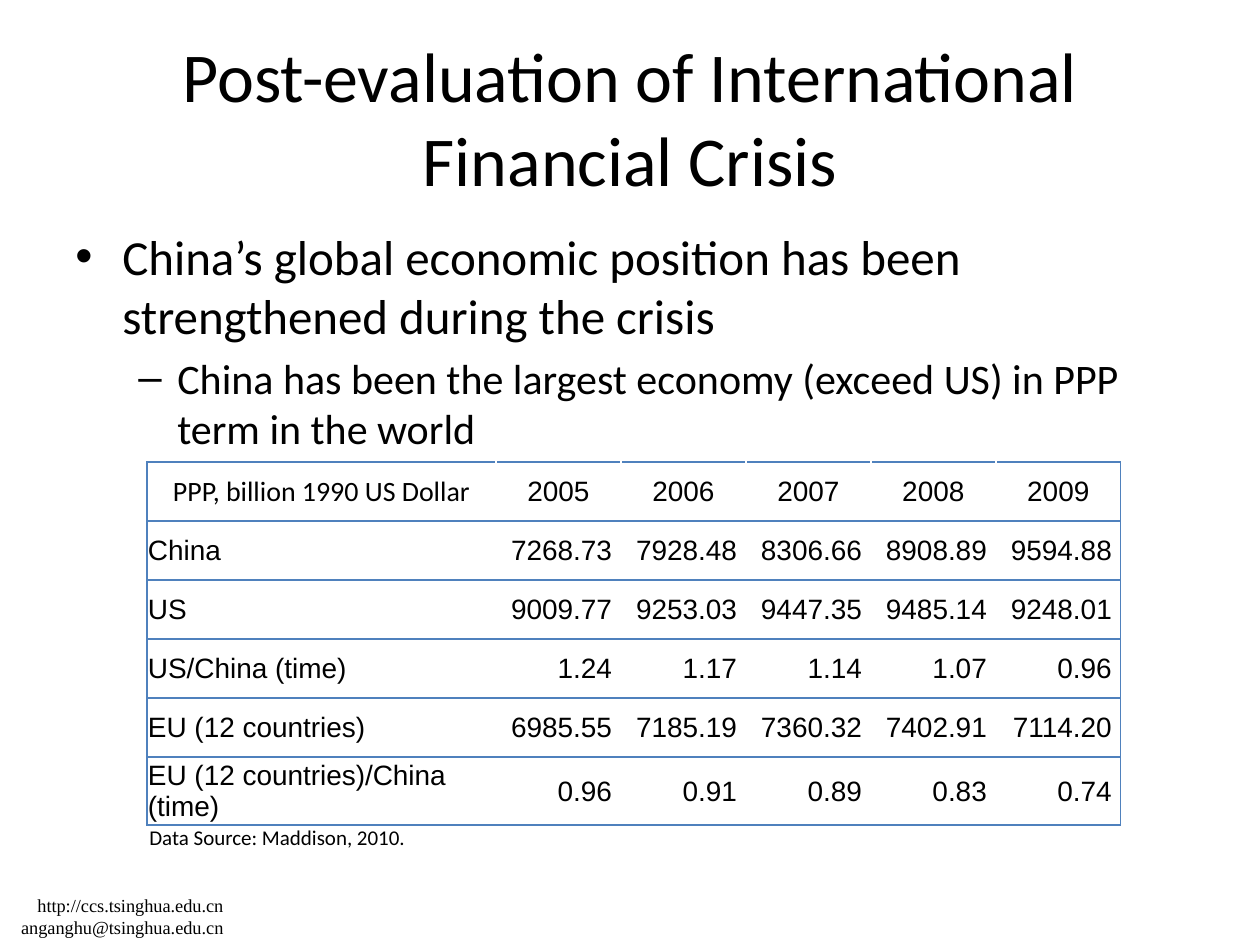
from lxml.etree import SubElement
from pptx import Presentation
from pptx.dml.color import RGBColor
from pptx.enum.text import MSO_ANCHOR, PP_ALIGN
from pptx.oxml.ns import qn
from pptx.util import Pt

PX = 914400 / 126
COLORS = {"text": "000000", "cell": "FFFFFF", "border": "4F81BD"}
YEARS = ["2005", "2006", "2007", "2008", "2009"]
ECONOMIES = [
    ("China", ["7268.73", "7928.48", "8306.66", "8908.89", "9594.88"]),
    ("US", ["9009.77", "9253.03", "9447.35", "9485.14", "9248.01"]),
    ("US/China (time)", ["1.24", "1.17", "1.14", "1.07", "0.96"]),
    ("EU (12 countries)", ["6985.55", "7185.19", "7360.32", "7402.91", "7114.20"]),
    ("EU (12 countries)/China (time)", ["0.96", "0.91", "0.89", "0.83", "0.74"]),
]


def emu(pixels):
    """Turn px into EMU."""
    return round(pixels * PX)


def add_run(paragraph, text, size, font_name="Calibri"):
    """Add one formatted run."""
    run = paragraph.add_run()
    run.text = text
    run.font.size = Pt(size)
    run.font.name = font_name
    run.font.bold = False
    run.font.color.rgb = RGBColor.from_string(COLORS["text"])


def add_text_frame(slide, box):
    """Add a wrapping text box and return its frame."""
    frame = slide.shapes.add_textbox(*map(emu, box)).text_frame
    frame.word_wrap = True
    return frame


def add_lines(slide, box, lines, size, font_name, alignment):
    """Add a text box with one paragraph for each line."""
    frame = add_text_frame(slide, box)
    for index, line in enumerate(lines):
        paragraph = frame.add_paragraph() if index else frame.paragraphs[0]
        paragraph.alignment = alignment
        add_run(paragraph, line, size, font_name)


def place_title(slide, box, text):
    """Move and format the title placeholder."""
    title = slide.shapes.title
    title.left, title.top, title.width, title.height = map(emu, box)
    frame = title.text_frame
    frame.word_wrap = True
    frame.vertical_anchor = MSO_ANCHOR.MIDDLE
    frame.paragraphs[0].alignment = PP_ALIGN.CENTER
    add_run(frame.paragraphs[0], text, 40)


def add_bullets(slide, box, bullets):
    """Add bulleted paragraphs with hanging indents."""
    frame = add_text_frame(slide, box)
    for level, (text, mark, size, margin, hanging) in enumerate(bullets):
        paragraph = frame.add_paragraph() if level else frame.paragraphs[0]
        paragraph.level = level
        properties = paragraph._p.get_or_add_pPr()
        properties.set("marL", str(emu(margin)))
        properties.set("indent", str(-emu(hanging)))
        SubElement(properties, qn("a:buFont"), typeface="Arial")
        SubElement(properties, qn("a:buChar"), char=mark)
        paragraph.space_before = Pt(size * 0.2 if level else 0)
        add_run(paragraph, text, size)


def add_borders(cell, sides):
    """Draw thin borders on the given sides of a cell."""
    properties = cell._tc.get_or_add_tcPr()
    for side in sides:
        line = SubElement(properties, qn(f"a:ln{side}"), w=str(Pt(1)))
        fill = SubElement(line, qn("a:solidFill"))
        SubElement(fill, qn("a:srgbClr"), val=COLORS["border"])


def fill_cell(cell, text, alignment, font_name, sides, right_margin):
    """Format one table cell and write its text."""
    add_borders(cell, sides)
    cell.fill.solid()
    cell.fill.fore_color.rgb = RGBColor.from_string(COLORS["cell"])
    cell.vertical_anchor = MSO_ANCHOR.MIDDLE
    cell.margin_left = cell.margin_top = emu(1)
    cell.margin_right = emu(right_margin)
    cell.margin_bottom = 0
    paragraph = cell.text_frame.paragraphs[0]
    paragraph.alignment = alignment
    add_run(paragraph, text, 16, font_name)


def add_economy_table(slide, box, label_width):
    """Add the table of output by economy and year."""
    rows = [("PPP, billion 1990 US Dollar", YEARS)] + ECONOMIES
    count = len(YEARS)
    left, top, width, height = box
    frame = slide.shapes.add_table(len(rows), count + 1, *map(emu, box))
    table = frame.table
    table.first_row = table.horz_banding = False
    for row in table.rows:
        row.height = emu(height / len(rows))
    for index, column in enumerate(table.columns):
        column.width = emu((width - label_width) / count if index else label_width)
    for row_index, (label, values) in enumerate(rows):
        header = row_index == 0
        for column_index, text in enumerate([label] + values):
            is_value = column_index > 0
            alignment = PP_ALIGN.RIGHT if is_value else PP_ALIGN.LEFT
            if header:
                alignment = PP_ALIGN.CENTER
            font_name = "Calibri" if header and not is_value else "Arial"
            sides = {0: "LTB", count: "RTB"}.get(column_index, "TB")
            right_margin = 9 if is_value and not header else 1
            cell = table.cell(row_index, column_index)
            fill_cell(cell, text, alignment, font_name, sides, right_margin)


def main():
    """Build and save the slide."""
    presentation = Presentation()
    presentation.slide_width, presentation.slide_height = emu(1260), emu(945)
    slide = presentation.slides.add_slide(presentation.slide_layouts[5])
    add_lines(slide, (-10, 888, 246, 57),
              ["http://ccs.tsinghua.edu.cn", "anganghu@tsinghua.edu.cn"],
              10.5, "Times New Roman", PP_ALIGN.RIGHT)
    place_title(slide, (63, 38, 1134, 158),
                "Post-evaluation of International Financial Crisis")
    add_bullets(slide, (63, 220, 1134, 624), [
        ("China’s global economic position has been strengthened during the crisis",
         "•", 28, 47, 47),
        ("China has been the largest economy (exceed US) in PPP term in the world",
         "–", 24, 102, 39),
    ])
    add_economy_table(slide, (147, 462, 974, 354), 349)
    add_lines(slide, (137, 818, 955, 38), ["Data Source: Maddison, 2010."],
              12, "Calibri", PP_ALIGN.LEFT)
    presentation.save("out.pptx")


if __name__ == "__main__":
    main()
